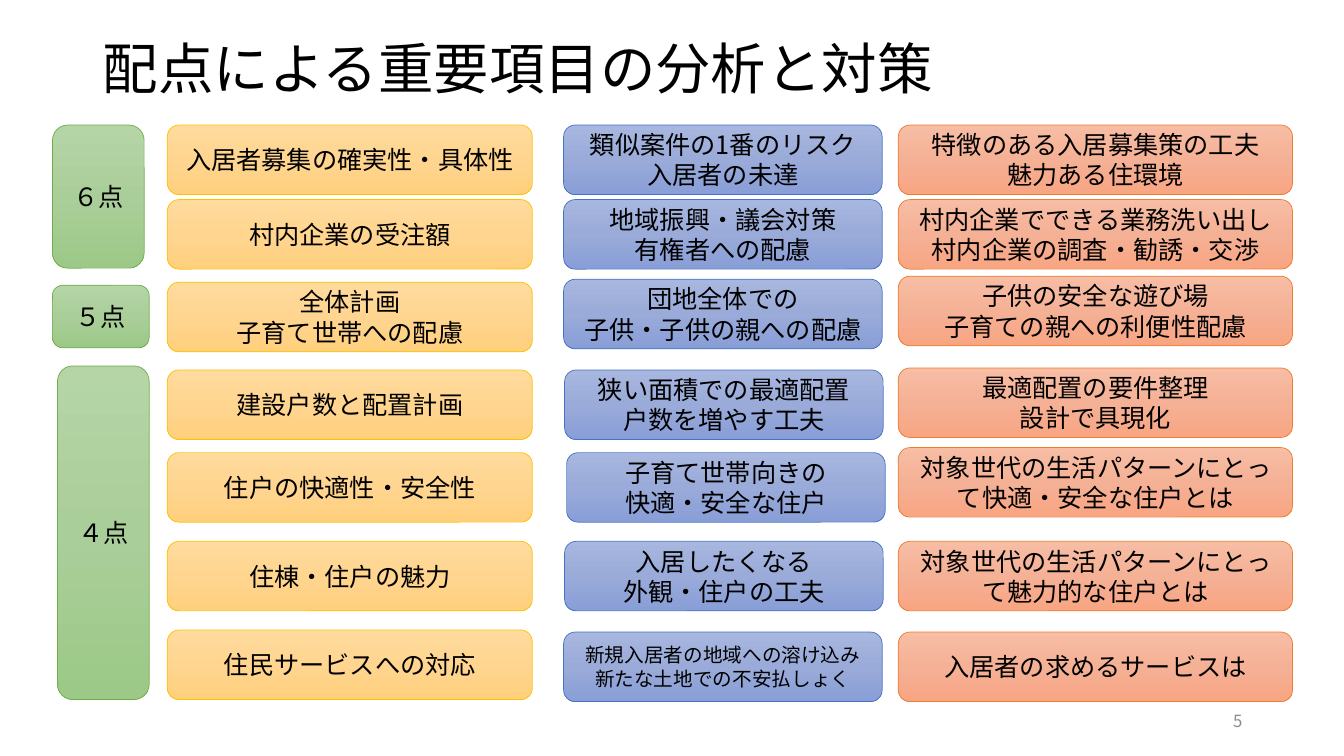
from copy import deepcopy

from lxml.etree import SubElement
from pptx import Presentation
from pptx.dml.color import RGBColor
from pptx.enum.shapes import MSO_SHAPE as Shape
from pptx.enum.text import MSO_ANCHOR as Anchor, PP_ALIGN as Align
from pptx.oxml.ns import qn
from pptx.util import Pt

FONT = "Noto Sans CJK JP"
EMU_PER_PX = 9144
BOX_HEIGHT = 69

TITLE = "配点による重要項目の分析と対策"
PAGE_NUMBER = "5"

GREEN = (("B5D5A7", "AACE9A", "9CC987"), "70AD47")
YELLOW = (("FFDB9E", "FFD590", "FFD07C"), "FFC000")
BLUE = (("A8B7DF", "9AABD9", "889ED7"), "4472C4")
ORANGE = (("F7BDA5", "F5B196", "F8A582"), "ED7D31")

SCORES = [
    ("６点", (52, 124, 91, 142)),
    ("５点", (52, 283, 96, 62)),
    ("４点", (57, 363, 91, 331)),
]

ITEMS = [
    (166, 124, "入居者募集の確実性・具体性"),
    (166, 198, "村内企業の受注額"),
    (166, 280, "全体計画\n子育て世帯への配慮"),
    (166, 367, "建設戸数と配置計画"),
    (166, 449, "住戸の快適性・安全性"),
    (166, 537, "住棟・住戸の魅力"),
    (166, 625, "住民サービスへの対応"),
]
ISSUES = [
    (559, 124, "類似案件の1番のリスク\n入居者の未達"),
    (559, 198, "地域振興・議会対策\n有権者への配慮"),
    (559, 277, "団地全体での\n子供・子供の親への配慮"),
    (560, 367, "狭い面積での最適配置\n戸数を増やす工夫"),
    (562, 449, "子育て世帯向きの\n快適・安全な住戸"),
    (560, 537, "入居したくなる\n外観・住戸の工夫"),
    (559, 627, "新規入居者の地域への溶け込み\n新たな土地での不安払しょく"),
]
MEASURES = [
    (891, 124, "特徴のある入居募集策の工夫\n魅力ある住環境"),
    (891, 198, "村内企業でできる業務洗い出し\n村内企業の調査・勧誘・交渉"),
    (891, 274, "子供の安全な遊び場\n子育ての親への利便性配慮"),
    (891, 365, "最適配置の要件整理\n設計で具現化"),
    (891, 444, "対象世代の生活パターンにとって快適・安全な住戸とは"),
    (891, 537, "対象世代の生活パターンにとって魅力的な住戸とは"),
    (891, 627, "入居者の求めるサービスは"),
]
COLUMNS = [(ITEMS, 362, YELLOW), (ISSUES, 316, BLUE), (MEASURES, 391, ORANGE)]
SMALL_TEXT = ISSUES[-1][2]


def px(*lengths):
    return [length * EMU_PER_PX for length in lengths]


def color(value):
    return RGBColor.from_string(value)


def write(shape, text, size, align, text_color="000000", spacing=None):
    frame = shape.text_frame
    frame.text = text
    frame.word_wrap = True
    frame.vertical_anchor = Anchor.MIDDLE
    for paragraph in frame.paragraphs:
        paragraph.alignment = align
        paragraph.line_spacing = spacing
        for run in paragraph.runs:
            run.font.size = Pt(size)
            run.font.color.rgb = color(text_color)
            run.font.name = FONT
            SubElement(run.font._element, qn("a:ea"), typeface=FONT)


def fill_gradient(shape, colors):
    shape.fill.gradient()
    shape.fill.gradient_angle = 270
    stop_list = shape._element.spPr.find(".//" + qn("a:gsLst"))
    stop_list.insert(1, deepcopy(stop_list[0]))
    for index, (stop, value) in enumerate(zip(shape.fill.gradient_stops, colors)):
        stop.position = index / 2
        stop.color.rgb = color(value)


def add_box(slide, bounds, text, style):
    colors, line_color = style
    shape = slide.shapes.add_shape(Shape.ROUNDED_RECTANGLE, *px(*bounds))
    shape.shadow.inherit = False
    fill_gradient(shape, colors)
    shape.line.color.rgb = color(line_color)
    shape.line.width = Pt(0.5)
    write(shape, text, 14 if text == SMALL_TEXT else 18, Align.CENTER)


def main():
    presentation = Presentation()
    presentation.slide_width, presentation.slide_height = px(1333, 750)
    slide = presentation.slides.add_slide(presentation.slide_layouts[6])

    title = slide.shapes.add_textbox(*px(92, 40, 1150, 62))
    write(title, TITLE, 39.6, Align.LEFT, spacing=0.9)
    number = slide.shapes.add_textbox(*px(942, 695, 300, 40))
    write(number, PAGE_NUMBER, 12, Align.RIGHT, "8C8C8C")

    for text, bounds in SCORES:
        add_box(slide, bounds, text, GREEN)
    for boxes, width, style in COLUMNS:
        for left, top, text in boxes:
            add_box(slide, (left, top, width, BOX_HEIGHT), text, style)

    presentation.save("out.pptx")


if __name__ == "__main__":
    main()
